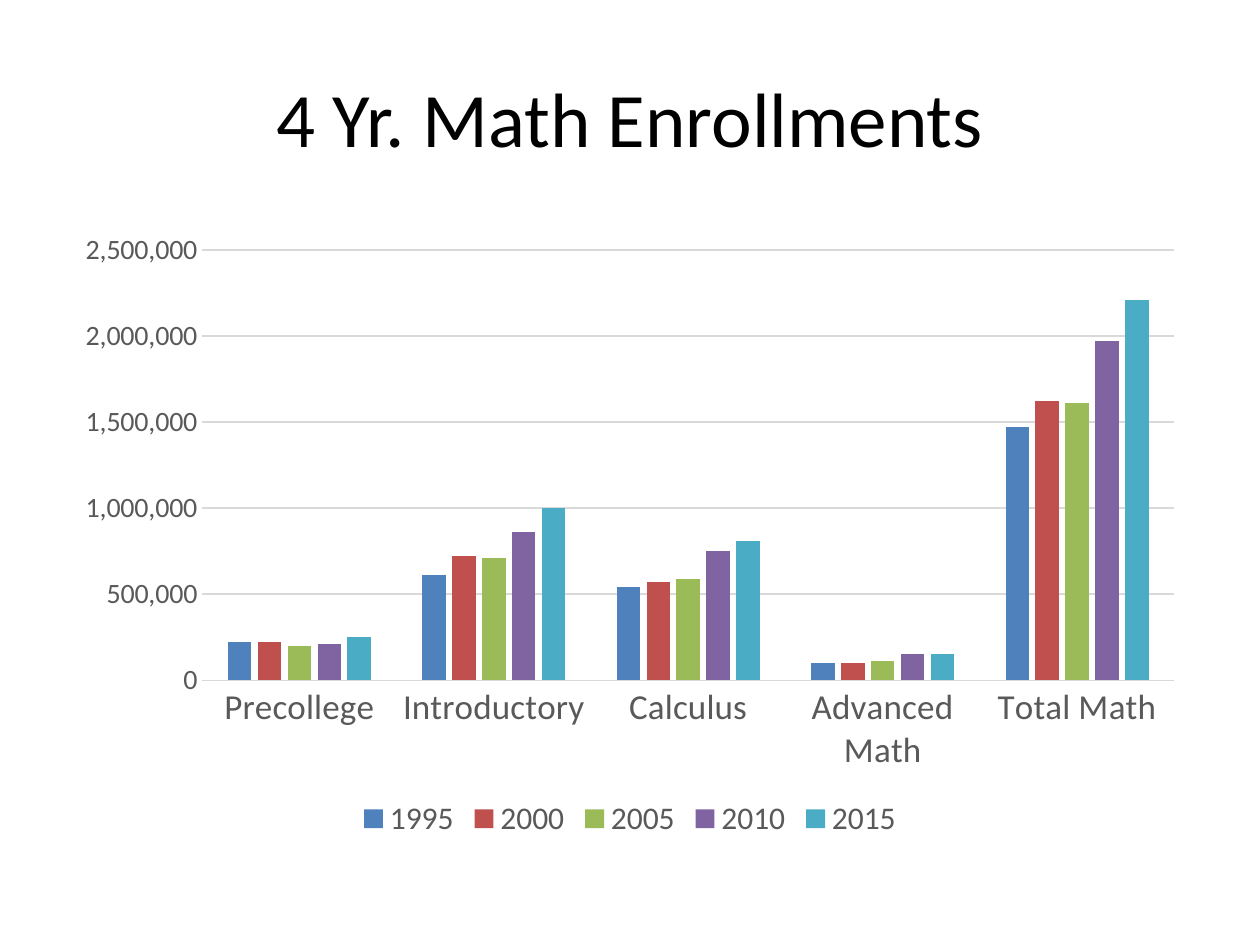
from dataclasses import dataclass

import pptx
import pptx.chart.data
import pptx.dml.color
import pptx.enum.chart
import pptx.enum.text
import pptx.util
from pptx.util import Inches

FONT = "Calibri"
LABEL_GRAY = "595959"
RULE_GRAY = "D9D9D9"
COURSES = ["Precollege", "Introductory", "Calculus", "Advanced Math", "Total Math"]


@dataclass
class YearEnrollment:
    year: str
    color: str
    students: list[int]


YEARS = [
    YearEnrollment("1995", "4F81BD", [220000, 610000, 540000, 100000, 1470000]),
    YearEnrollment("2000", "C0504D", [220000, 720000, 570000, 100000, 1620000]),
    YearEnrollment("2005", "9BBB59", [200000, 710000, 590000, 110000, 1610000]),
    YearEnrollment("2010", "8064A2", [210000, 860000, 750000, 150000, 1970000]),
    YearEnrollment("2015", "4BACC6", [250000, 1000000, 810000, 150000, 2210000]),
]


def rgb(color: str) -> pptx.dml.color.RGBColor:
    return pptx.dml.color.RGBColor.from_string(color)


def style_font(font, size: float, color: str) -> None:
    font.name = FONT
    font.size = pptx.util.Pt(size)
    font.color.rgb = rgb(color)


def style_rule(line) -> None:
    line.color.rgb = rgb(RULE_GRAY)
    line.width = pptx.util.Pt(0.75)


def add_heading(slide, text: str) -> None:
    heading = slide.shapes.title
    heading.left, heading.top = Inches(0.5), Inches(0.3)
    heading.width, heading.height = Inches(9), Inches(1.25)
    heading.text_frame.vertical_anchor = pptx.enum.text.MSO_ANCHOR.MIDDLE
    paragraph = heading.text_frame.paragraphs[0]
    paragraph.alignment = pptx.enum.text.PP_ALIGN.CENTER
    run = paragraph.add_run()
    run.text = text
    style_font(run.font, 44, "000000")


def style_axes(chart) -> None:
    course_axis, student_axis = chart.category_axis, chart.value_axis
    for axis, size in ((course_axis, 20), (student_axis, 16)):
        style_font(axis.tick_labels.font, size, LABEL_GRAY)
        axis.major_tick_mark = pptx.enum.chart.XL_TICK_MARK.NONE
        axis.minor_tick_mark = pptx.enum.chart.XL_TICK_MARK.NONE
    style_rule(course_axis.format.line)
    student_axis.format.line.fill.background()
    student_axis.has_major_gridlines = True
    style_rule(student_axis.major_gridlines.format.line)
    student_axis.minimum_scale = 0
    student_axis.maximum_scale = 2500000
    student_axis.major_unit = 500000
    student_axis.tick_labels.number_format = "#,##0"
    student_axis.tick_labels.number_format_is_linked = False


def add_enrollment_chart(slide, years: list[YearEnrollment]) -> None:
    enrollments = pptx.chart.data.CategoryChartData(number_format="#,##0")
    enrollments.categories = COURSES
    for entry in years:
        enrollments.add_series(entry.year, entry.students)
    chart = slide.shapes.add_chart(
        pptx.enum.chart.XL_CHART_TYPE.COLUMN_CLUSTERED,
        Inches(0.5), Inches(1.75), Inches(9), Inches(4.95), enrollments,
    ).chart
    style_font(chart.font, 10, "000000")
    chart.has_title = False
    style_axes(chart)

    columns = chart.plots[0]
    columns.gap_width = 219
    columns.overlap = -27
    columns.vary_by_categories = False
    for series, entry in zip(columns.series, years):
        series.format.fill.solid()
        series.format.fill.fore_color.rgb = rgb(entry.color)
        series.invert_if_negative = False

    chart.has_legend = True
    chart.legend.position = pptx.enum.chart.XL_LEGEND_POSITION.BOTTOM
    chart.legend.include_in_layout = False
    style_font(chart.legend.font, 18, LABEL_GRAY)


def main() -> None:
    deck = pptx.Presentation()
    deck.slide_width, deck.slide_height = Inches(10), Inches(7.5)
    slide = deck.slides.add_slide(deck.slide_layouts[5])
    add_heading(slide, "4 Yr. Math Enrollments")
    add_enrollment_chart(slide, YEARS)
    deck.save("out.pptx")


if __name__ == "__main__":
    main()
